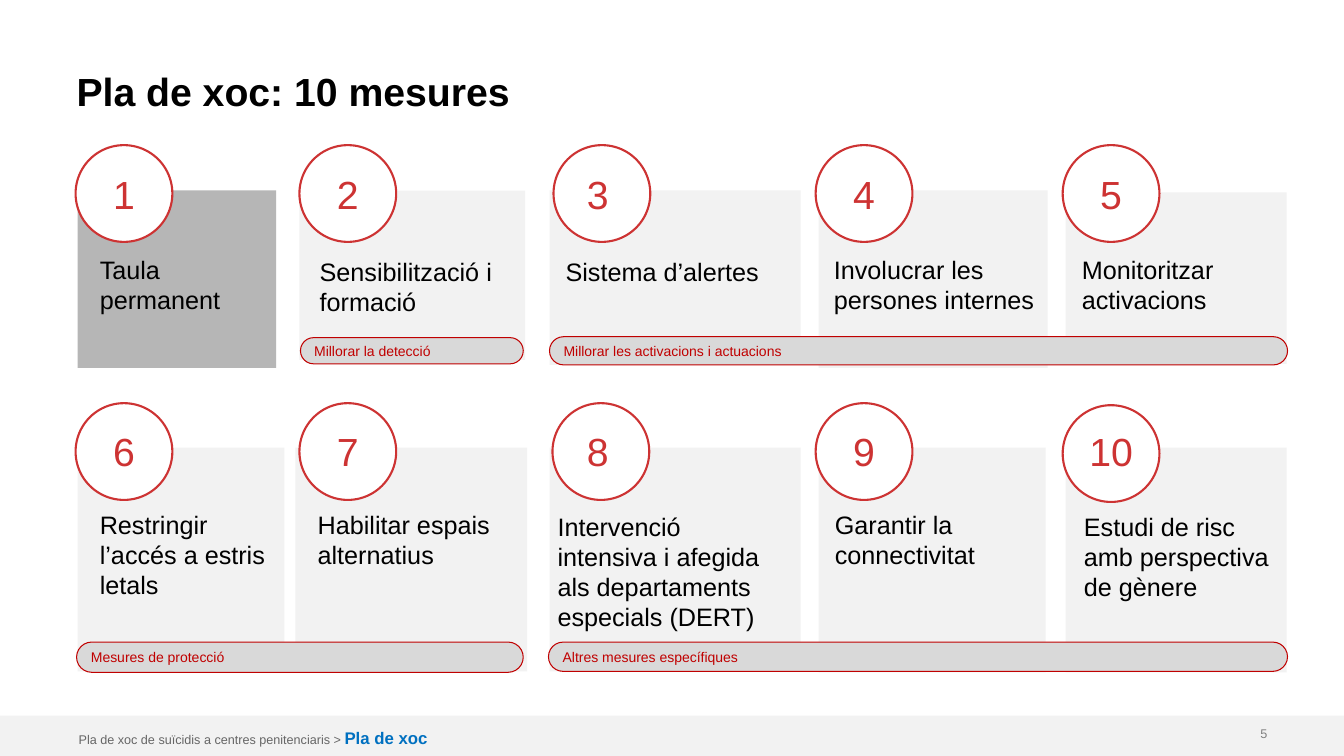
"""Build the slide listing the ten measures of the action plan."""
import pptx
import pptx.util
import pptx.dml.color
import pptx.enum.shapes
import pptx.enum.text

Inches = pptx.util.Inches
Pt = pptx.util.Pt
RGBColor = pptx.dml.color.RGBColor
KIND = pptx.enum.shapes.MSO_SHAPE
ALIGN = pptx.enum.text.PP_ALIGN
ANCHOR = pptx.enum.text.MSO_ANCHOR

WHITE = RGBColor(0xFF, 0xFF, 0xFF)
BLACK = RGBColor(0, 0, 0)
PALE = RGBColor(0xF2, 0xF2, 0xF2)
DARK = RGBColor(0xB6, 0xB6, 0xB6)
SILVER = RGBColor(0xD9, 0xD9, 0xD9)
GRAY = RGBColor(0x80, 0x80, 0x80)
SLATE = RGBColor(0x66, 0x66, 0x66)
RED = RGBColor(0xCD, 0x33, 0x33)
WINE = RGBColor(0xC0, 0, 0)
BLUE = RGBColor(0, 0x70, 0xC0)

TITLE = "Pla de xoc: 10 mesures"
TRAIL = "Pla de xoc de suïcidis a centres penitenciaris > "
TOPIC = "Pla de xoc"
PAGE = "5"

CARDS = [
    ("Taula permanent", (0.77, 1.89, 1.97, 1.76), (0.75, 1.44), (0.99, 2.52, 1.73)),
    ("Sensibilització i formació", (2.97, 1.89, 2.24, 1.68), (2.97, 1.44), (3.17, 2.54, 1.85)),
    ("Sistema d’alertes", (5.45, 1.89, 2.49, 1.73), (5.49, 1.44), (5.61, 2.54, 2.2)),
    ("Involucrar les persones internes", (8.12, 1.89, 2.27, 1.76), (8.09, 1.44), (8.27, 2.52, 2)),
    ("Monitoritzar activacions", (10.57, 1.91, 2.19, 1.7), (10.54, 1.44), (10.73, 2.52, 1.85)),
    ("Restringir l’accés a estris letals", (0.77, 4.44, 2.05, 2.22), (0.75, 4), (0.99, 5.05, 1.74)),
    ("Habilitar espais alternatius", (2.93, 4.44, 2.3, 2.22), (2.97, 4), (3.15, 5.05, 1.85)),
    ("Intervenció intensiva i afegida als departaments especials (DERT)",
     (5.45, 4.44, 2.49, 2.22), (5.48, 4), (5.53, 5.07, 2.2)),
    ("Garantir la connectivitat", (8.12, 4.44, 2.25, 2.23), (8.09, 4), (8.28, 5.05, 1.85)),
    ("Estudi de risc amb perspectiva de gènere", (10.57, 4.44, 2.19, 2.23), (10.54, 4.02), (10.75, 5.07, 1.85)),
]
BARS = [
    ("Millorar la detecció", (2.98, 3.35, 2.21, 0.26)),
    ("Millorar les activacions i actuacions", (5.45, 3.34, 7.32, 0.28)),
    ("Mesures de protecció", (0.76, 6.37, 4.43, 0.3)),
    ("Altres mesures específiques", (5.44, 6.37, 7.33, 0.29)),
]
COLS = (0.75, 2.97, 5.45, 8.09, 10.54)
ROWS = (1.59, 4.14)
RING = 0.96

FLUSH = {"word_wrap": True, "margin_left": 0, "margin_right": 0, "margin_top": 0, "margin_bottom": 0}
MIDDLE = {"word_wrap": True, "vertical_anchor": ANCHOR.MIDDLE}
BODY = {"space_before": Pt(10)}
CENTER = {"space_before": Pt(10), "alignment": ALIGN.CENTER}
LEFT = {"alignment": ALIGN.LEFT}
TIGHT = {"line_spacing": 0.9}
FOOT = {"line_spacing": 0.9, "space_before": Pt(10)}
RIGHT = {**FOOT, "alignment": ALIGN.RIGHT}


def apply(item, style):
    for name, value in style.items():
        setattr(item, name, value)


def write(shape, runs, frame, para):
    apply(shape.text_frame, frame)
    line = shape.text_frame.paragraphs[0]
    apply(line, para)
    for text, size, color, bold in runs:
        run = line.add_run()
        run.text = text
        apply(run.font, {"name": "Arial", "size": Pt(size), "bold": bold})
        run.font.color.rgb = color


def label(slide, box, runs, frame, para):
    write(slide.shapes.add_textbox(*map(Inches, box)), runs, frame, para)


def draw(slide, kind, box, fill, edge=None, width=0):
    shape = slide.shapes.add_shape(kind, *map(Inches, box))
    shape.shadow.inherit = False
    shape.fill.solid()
    shape.fill.fore_color.rgb = fill
    if edge is None:
        shape.line.fill.background()
    else:
        shape.line.color.rgb = edge
        shape.line.width = Pt(width)
    return shape


def main():
    deck = pptx.Presentation()
    apply(deck, {"slide_width": Inches(13.33), "slide_height": Inches(7.5)})
    slide = deck.slides.add_slide(deck.slide_layouts[6])
    draw(slide, KIND.RECTANGLE, (0, 7.1, 13.33, 0.4), PALE)
    label(slide, (10.67, 7.22, 1.9, 0.18), [(PAGE, 9, GRAY, False)], FLUSH, RIGHT)
    label(slide, (0.76, 0.72, 11.77, 0.47), [(TITLE, 28, BLACK, True)], FLUSH, TIGHT)
    for index, (text, card, ring, body) in enumerate(CARDS):
        row, col = divmod(index, len(COLS))
        draw(slide, KIND.RECTANGLE, card, PALE if index else DARK)
        label(slide, (*body, 0.59), [(text, 18, BLACK, False)], FLUSH, BODY)
        draw(slide, KIND.OVAL, (*ring, RING, RING), WHITE, RED, 1.5)
        spot = (COLS[col], ROWS[row], RING, 0.66)
        label(slide, spot, [(str(index + 1), 28, RED, False)], MIDDLE, CENTER)
    for text, box in BARS:
        bar = draw(slide, KIND.ROUNDED_RECTANGLE, box, SILVER, WINE, 0.75)
        bar.adjustments[0] = 0.5
        write(bar, [(text, 10, WINE, False)], MIDDLE, LEFT)
    runs = [(TRAIL, 9, SLATE, False), (TOPIC, 12, BLUE, True)]
    label(slide, (0.78, 7.24, 5.29, 0.13), runs, FLUSH, FOOT)
    deck.save("out.pptx")


if __name__ == "__main__":
    main()
